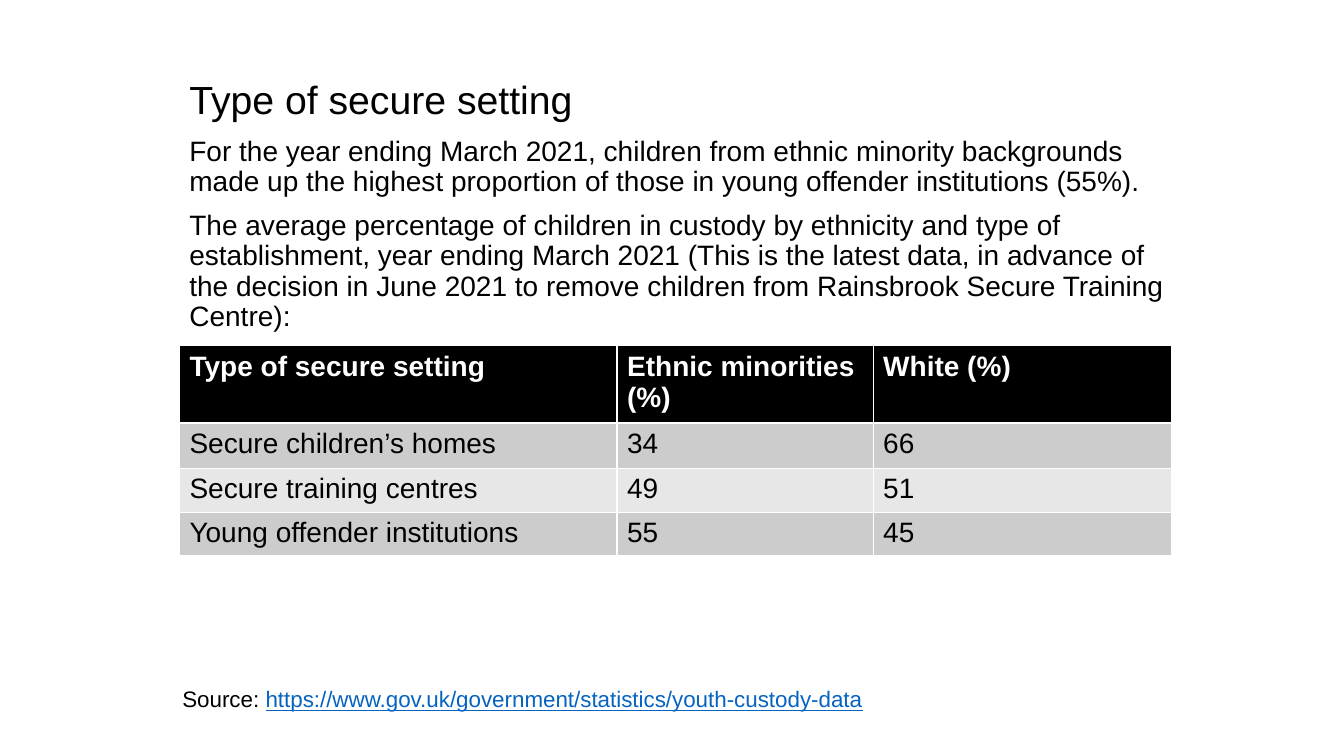
from pptx import Presentation
from pptx.dml.color import RGBColor
from pptx.util import Inches, Pt

BLACK = RGBColor(0x00, 0x00, 0x00)
WHITE = RGBColor(0xFF, 0xFF, 0xFF)
LINK_BLUE = RGBColor(0x05, 0x63, 0xC1)
DARK_BAND = RGBColor(0xCC, 0xCC, 0xCC)
LIGHT_BAND = RGBColor(0xE7, 0xE7, 0xE7)

INTRODUCTION = [
    ("Type of secure setting", 28),
    ("For the year ending March 2021, children from ethnic minority backgrounds "
     "made up the highest proportion of those in young offender institutions (55%).", 20),
    ("The average percentage of children in custody by ethnicity and type of "
     "establishment, year ending March 2021 (This is the latest data, in advance of "
     "the decision in June 2021 to remove children from Rainsbrook Secure Training "
     "Centre):", 20),
]
SETTINGS = [
    ("Type of secure setting", "Ethnic minorities (%)", "White (%)"),
    ("Secure children’s homes", "34", "66"),
    ("Secure training centres", "49", "51"),
    ("Young offender institutions", "55", "45"),
]
COLUMN_WIDTHS = [4.34, 2.54, 2.96]
ROW_HEIGHTS = [0.7, 0.45, 0.41, 0.41]


class PageBuilder:
    def __init__(self, page, font_name="Arial"):
        self.page = page
        self.font_name = font_name

    def style(self, font, size, color=BLACK, bold=False):
        font.name = self.font_name
        font.size = Pt(size)
        font.color.rgb = color
        font.bold = bold

    def text_frame(self, left, top, width, height):
        box = self.page.shapes.add_textbox(
            Inches(left), Inches(top), Inches(width), Inches(height))
        box.text_frame.word_wrap = True
        return box.text_frame

    def body(self, paragraphs, *place):
        frame = self.text_frame(*place)
        for index, (text, size) in enumerate(paragraphs):
            para = frame.add_paragraph() if index else frame.paragraphs[0]
            para.text = text
            para.line_spacing = 0.9
            para.space_before = Pt(10)
            self.style(para.font, size)

    def table(self, rows, left, top, widths, heights):
        table = self.page.shapes.add_table(
            len(rows), len(widths), Inches(left), Inches(top),
            Inches(sum(widths)), Inches(sum(heights))).table
        for column, width in zip(table.columns, widths):
            column.width = Inches(width)
        for index, (row, height, texts) in enumerate(zip(table.rows, heights, rows)):
            row.height = Inches(height)
            header = index == 0
            band = BLACK if header else DARK_BAND if index % 2 else LIGHT_BAND
            for cell, text in zip(row.cells, texts):
                cell.text = text
                cell.fill.solid()
                cell.fill.fore_color.rgb = band
                self.style(cell.text_frame.paragraphs[0].font, 20,
                           WHITE if header else BLACK, header)

    def source_line(self, label, address, *place):
        para = self.text_frame(*place).paragraphs[0]
        for text, color in ((label, BLACK), (address, LINK_BLUE)):
            span = para.add_run()
            span.text = text
            self.style(span.font, 16, color)
        span.font.underline = True


def main():
    deck = Presentation()
    deck.slide_width = Inches(13.33)
    deck.slide_height = Inches(7.5)
    builder = PageBuilder(deck.slides.add_slide(deck.slide_layouts[6]))
    builder.body(INTRODUCTION, 1.78, 0.75, 10, 5.8)
    builder.table(SETTINGS, 1.78, 3.43, COLUMN_WIDTHS, ROW_HEIGHTS)
    builder.source_line("Source: ", "https://www.gov.uk/government/statistics/youth-custody-data",
                        1.71, 6.75, 9.69, 0.37)
    deck.save("out.pptx")


if __name__ == "__main__":
    main()
